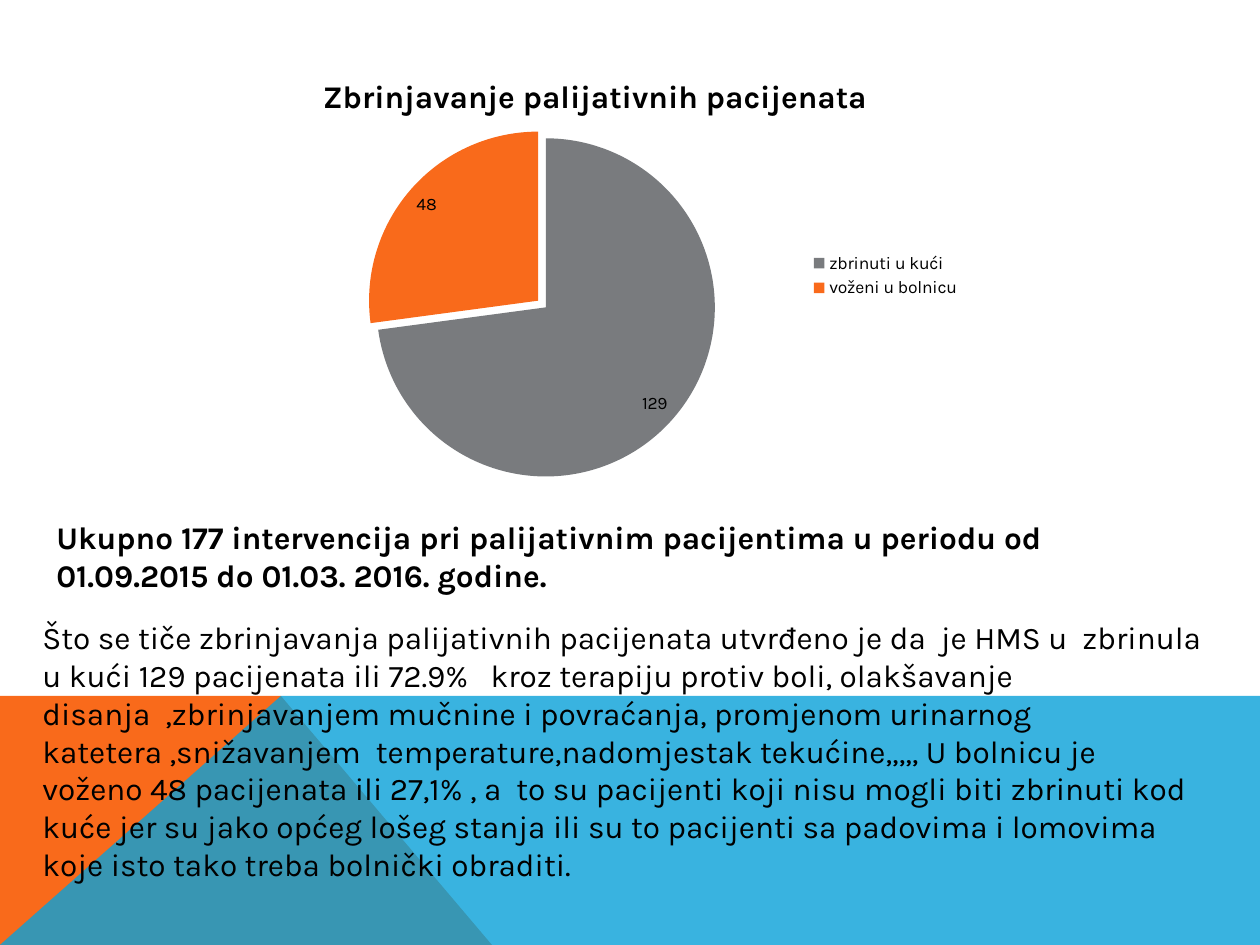
from dataclasses import dataclass

import lxml.etree
import pptx
import pptx.chart.data
import pptx.dml.color
import pptx.enum.chart
import pptx.oxml
import pptx.oxml.ns
import pptx.util

PX = 914400 / 126
FONT = "Karla"
BLACK = pptx.dml.color.RGBColor(0x00, 0x00, 0x00)
GRAY = pptx.dml.color.RGBColor(0x79, 0x7B, 0x7E)
ORANGE = pptx.dml.color.RGBColor(0xF9, 0x6A, 0x1B)
BLUE = pptx.dml.color.RGBColor(0x08, 0xA1, 0xD9)


@dataclass(frozen=True)
class Band:
    points: tuple[tuple[int, int], ...]
    color: pptx.dml.color.RGBColor
    opacity: int = 100


@dataclass(frozen=True)
class Note:
    box: tuple[int, int, int, int]
    text: str
    bold: bool = False


TITLE = "Zbrinjavanje palijativnih pacijenata"
CHART_BOX = (217, 55, 756, 441)
PLOT = {"x": 0.06, "y": 0.17, "w": 0.74, "h": 0.79}
SLICES = (("zbrinuti u kući", 129, GRAY), ("voženi u bolnicu", 48, ORANGE))
BANDS = (
    Band(((0, 945), (0, 696), (281, 696), (492, 945)), ORANGE),
    Band(((0, 945), (281, 696), (1260, 696), (1260, 945)), BLUE, 80),
)
NOTES = (
    Note(
        (44, 512, 1032, 89),
        "Ukupno 177 intervencija pri palijativnim pacijentima u periodu od "
        "01.09.2015 do 01.03. 2016. godine.",
        True,
    ),
    Note(
        (30, 612, 1186, 242),
        "Što se tiče zbrinjavanja palijativnih pacijenata utvrđeno je da  je HMS u  zbrinula "
        "u kući 129 pacijenata ili 72.9%   kroz terapiju protiv boli, olakšavanje "
        "disanja  ,zbrinjavanjem mučnine i povraćanja, promjenom urinarnog "
        "katetera ,snižavanjem  temperature,nadomjestak tekućine,,,,, U bolnicu je "
        "voženo 48 pacijenata ili 27,1% , a  to su pacijenti koji nisu mogli biti zbrinuti kod "
        "kuće jer su jako općeg lošeg stanja ili su to pacijenti sa padovima i lomovima "
        "koje isto tako treba bolnički obraditi.",
    ),
)


def emu(box: tuple[int, ...]) -> list[pptx.util.Emu]:
    return [pptx.util.Emu(round(v * PX)) for v in box]


def set_font(font, size: int, bold: bool = False) -> None:
    font.name = FONT
    font.size = pptx.util.Pt(size)
    font.bold = bold
    font.color.rgb = BLACK


def add_band(slide, band: Band) -> None:
    builder = slide.shapes.build_freeform(*band.points[0], scale=PX)
    builder.add_line_segments(band.points[1:], close=True)
    sp = builder.convert_to_shape()
    sp.shadow.inherit = False
    sp.line.fill.background()
    sp.fill.solid()
    sp.fill.fore_color.rgb = band.color
    if band.opacity < 100:
        clr = sp.fill._xPr.find(".//" + pptx.oxml.ns.qn("a:srgbClr"))
        alpha = lxml.etree.SubElement(clr, pptx.oxml.ns.qn("a:alpha"))
        alpha.set("val", str(band.opacity * 1000))


def add_note(slide, note: Note) -> None:
    tf = slide.shapes.add_textbox(*emu(note.box)).text_frame
    tf.word_wrap = True
    p = tf.paragraphs[0]
    p.text = note.text
    set_font(p.font, 18, note.bold)


def set_plot_layout(chart) -> None:
    qn = pptx.oxml.ns.qn
    area = chart._chartSpace.chart.plotArea
    for old in area.findall(qn("c:layout")):
        area.remove(old)
    layout = lxml.etree.Element(qn("c:layout"))
    area.insert(0, layout)
    manual = lxml.etree.SubElement(layout, qn("c:manualLayout"))
    settings = {"layoutTarget": "inner", "xMode": "edge", "yMode": "edge", **PLOT}
    for tag, value in settings.items():
        lxml.etree.SubElement(manual, qn("c:" + tag)).set("val", str(value))


def add_pie(slide) -> None:
    data = pptx.chart.data.CategoryChartData()
    data.categories = [name for name, _, _ in SLICES]
    data.add_series(TITLE, [value for _, value, _ in SLICES])
    chart = slide.shapes.add_chart(
        pptx.enum.chart.XL_CHART_TYPE.PIE, *emu(CHART_BOX), data
    ).chart
    set_font(chart.font, 10)
    chart.has_title = True
    p = chart.chart_title.text_frame.paragraphs[0]
    p.text = TITLE
    set_font(p.font, 18, True)
    chart.has_legend = True
    chart.legend.position = pptx.enum.chart.XL_LEGEND_POSITION.RIGHT
    chart.legend.include_in_layout = False
    set_font(chart.legend.font, 10)

    plot = chart.plots[0]
    plot.vary_by_categories = True
    plot.has_data_labels = True
    labels = plot.data_labels
    labels.show_value = True
    labels.show_percentage = False
    labels.position = pptx.enum.chart.XL_LABEL_POSITION.INSIDE_END
    set_font(labels.font, 10)
    series = plot.series[0]
    for i, (_, _, color) in enumerate(SLICES):
        fill = series.points[i].format.fill
        fill.solid()
        fill.fore_color.rgb = color
    explosion = lxml.etree.Element(pptx.oxml.ns.qn("c:explosion"))
    explosion.set("val", "3")
    series._element.find(pptx.oxml.ns.qn("c:dPt")).addprevious(explosion)
    set_plot_layout(chart)


def main() -> None:
    prs = pptx.Presentation()
    prs.slide_width, prs.slide_height = emu((1260, 945))
    slide = prs.slides.add_slide(prs.slide_layouts[6])
    for band in BANDS:
        add_band(slide, band)
    add_pie(slide)
    for note in NOTES:
        add_note(slide, note)
    prs.save("out.pptx")


if __name__ == "__main__":
    main()
